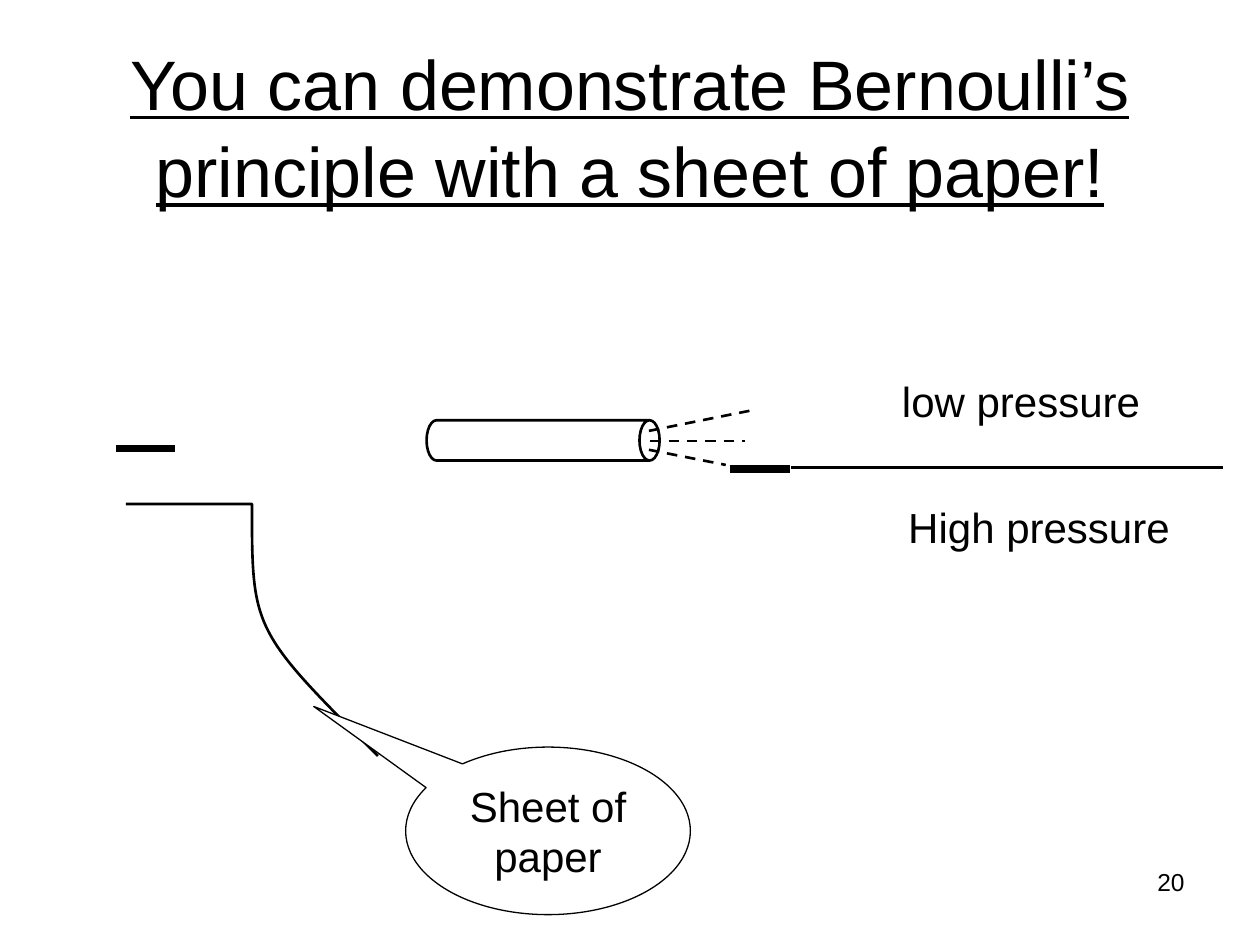
from pptx import Presentation
from pptx.dml.color import RGBColor
from pptx.enum.dml import MSO_LINE
from pptx.enum.shapes import MSO_CONNECTOR, MSO_SHAPE
from pptx.enum.text import MSO_ANCHOR, PP_ALIGN
from pptx.oxml.ns import qn
from pptx.util import Inches, Pt
from lxml import etree

COLORS = {"ink": "000000", "paper": "FFFFFF"}
FONT = "Arial"
CENTER, LEFT, RIGHT = PP_ALIGN.CENTER, PP_ALIGN.LEFT, PP_ALIGN.RIGHT
MIDDLE = MSO_ANCHOR.MIDDLE
STRAIGHT = MSO_CONNECTOR.STRAIGHT
DASH = MSO_LINE.DASH
CAN, CALLOUT = MSO_SHAPE.CAN, MSO_SHAPE.OVAL_CALLOUT
TITLE_ONLY = 5


def color(name):
    return RGBColor.from_string(COLORS[name])


def style_line(line, width):
    line.color.rgb = color("ink")
    line.width = Pt(width)


def write(text_frame, lines, size, align=LEFT, underline=None):
    for index, line in enumerate(lines):
        paragraph = text_frame.paragraphs[0] if index == 0 else text_frame.add_paragraph()
        paragraph.alignment = align
        run = paragraph.add_run()
        run.text = line
        run.font.name = FONT
        run.font.size = Pt(size)
        run.font.underline = underline
        run.font.color.rgb = color("ink")


def add_title(slide, text):
    title = slide.shapes.title
    title.left, title.top, title.width, title.height = map(Inches, (0.5, 0.36, 9, 1.25))
    title.text_frame.vertical_anchor = MIDDLE
    write(title.text_frame, [text], 40, CENTER, underline=True)
    title.text_frame.paragraphs[0].line_spacing = 1.04


def add_text(shapes, box, text, size, align=LEFT, wrap=False):
    text_box = shapes.add_textbox(*map(Inches, box))
    text_box.text_frame.word_wrap = wrap
    write(text_box.text_frame, [text], size, align)


def add_line(shapes, start, end, width=1.5, dash=None):
    connector = shapes.add_connector(STRAIGHT, *map(Inches, start + end))
    style_line(connector.line, width)
    if dash:
        connector.line.dash_style = dash
    etree.SubElement(connector._element.spPr, qn("a:effectLst"))


def add_shape(shapes, kind, box, adjustments, width):
    shape = shapes.add_shape(kind, *map(Inches, box))
    for index, value in enumerate(adjustments):
        shape.adjustments[index] = value
    shape.shadow.inherit = False
    shape.fill.solid()
    shape.fill.fore_color.rgb = color("paper")
    style_line(shape.line, width)
    return shape


def add_curve(shapes, points, width):
    """Draw Bezier segments: a start point, then three points for each."""
    builder = shapes.build_freeform(*points[0], scale=Inches(1))
    builder.add_line_segments(points[1:], close=False)
    curve = builder.convert_to_shape()
    curve.fill.background()
    curve.shadow.inherit = False
    style_line(curve.line, width)
    # Merge each three straight segments into one cubic segment
    segments = list(curve._element.iter(qn("a:lnTo")))
    outline = segments[0].getparent()
    for first in range(0, len(segments), 3):
        cubic = etree.SubElement(outline, qn("a:cubicBezTo"))
        for segment in segments[first:first + 3]:
            cubic.append(segment[0])
            outline.remove(segment)


def add_hanging_sheet(slide):
    shapes = slide.shapes.add_group_shape().shapes
    add_line(shapes, (0.92, 3.56), (1.39, 3.56), 4.5)
    add_curve(shapes, [
        (1.36, 3.56),
        (1.47, 3.53), (1.57, 3.51), (1.68, 3.6),
        (1.78, 3.7), (1.85, 3.74), (2, 4.15),
        (2.15, 4.56), (2.37, 5.31), (2.58, 6.06),
    ], 1.5)


def add_lifted_sheet(slide):
    shapes = slide.shapes.add_group_shape().shapes
    # Holder and sheet
    add_line(shapes, (5.79, 3.72), (6.27, 3.72), 4.5)
    add_line(shapes, (6.28, 3.71), (9.71, 3.71))
    # Tube and the air blown from it
    tube = add_shape(shapes, CAN, (4.15, 2.57, 0.32, 1.85), [0.5], 1.5)
    tube.rotation = 90
    for start, end in [((5.15, 3.57), (5.76, 3.69)),
                       ((5.16, 3.5), (5.91, 3.5)),
                       ((5.15, 3.42), (6, 3.25))]:
        add_line(shapes, start, end, dash=DASH)
    # Pressure labels
    add_text(shapes, (7.11, 3.93, 2.28, 0.5), "High pressure", 24)
    add_text(shapes, (7.06, 2.93, 2.09, 0.5), "low pressure", 24)


def add_callout(slide):
    callout = add_shape(slide.shapes, CALLOUT, (3.22, 5.93, 2.26, 1.33),
                        [-0.823, -0.743], 0.75)
    callout.text_frame.vertical_anchor = MIDDLE
    write(callout.text_frame, ["Sheet of", "paper"], 24, CENTER)


def main():
    presentation = Presentation()
    presentation.slide_width, presentation.slide_height = Inches(10), Inches(7.5)
    slide = presentation.slides.add_slide(presentation.slide_layouts[TITLE_ONLY])
    add_title(slide, "You can demonstrate Bernoulli’s principle with a sheet of paper!")
    add_hanging_sheet(slide)
    add_lifted_sheet(slide)
    add_callout(slide)
    # Slide number
    add_text(slide.shapes, (7.17, 6.83, 2.33, 0.52), "20", 14, RIGHT, wrap=True)
    presentation.save("out.pptx")


if __name__ == "__main__":
    main()
